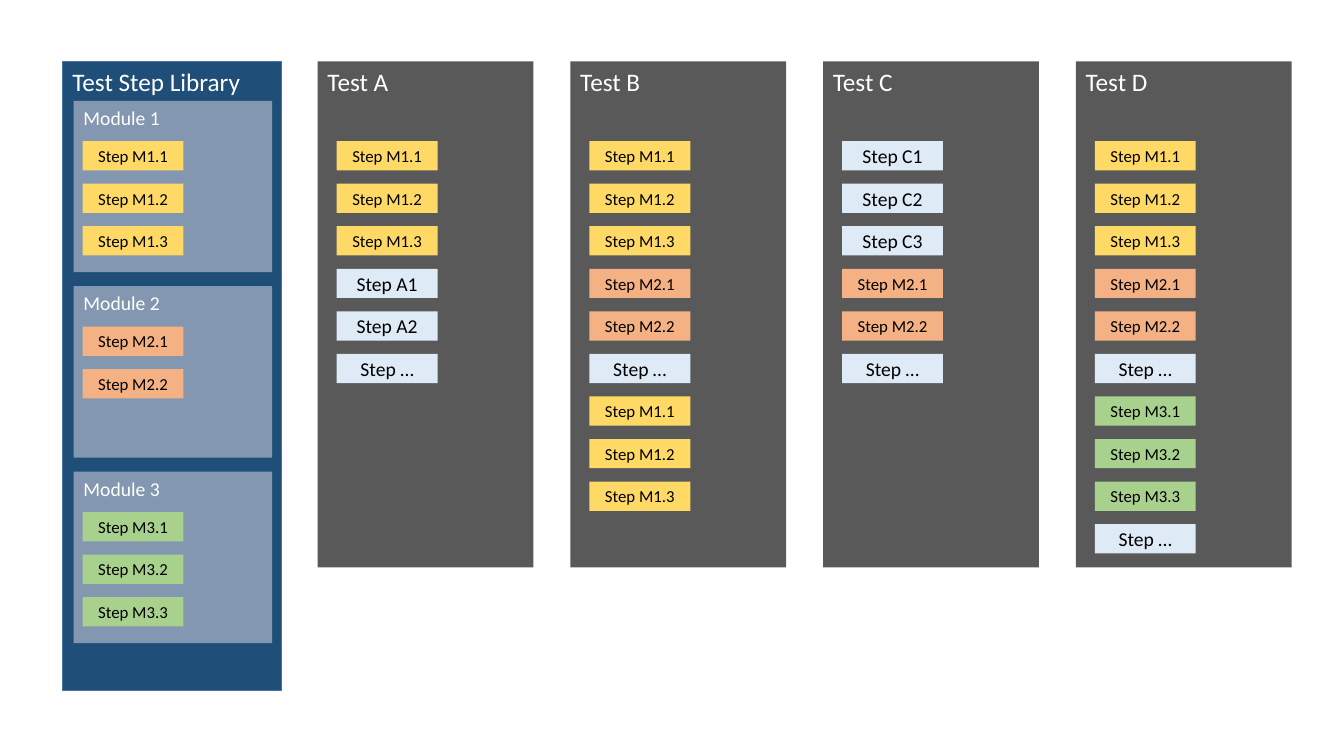
from pptx import Presentation
from pptx.dml.color import RGBColor
from pptx.enum.shapes import MSO_SHAPE
from pptx.enum.text import MSO_ANCHOR, PP_ALIGN
from pptx.util import Inches, Pt

RECTANGLE = MSO_SHAPE.RECTANGLE
TOP, MIDDLE = MSO_ANCHOR.TOP, MSO_ANCHOR.MIDDLE
LEFT, CENTER = PP_ALIGN.LEFT, PP_ALIGN.CENTER

WHITE = RGBColor(0xFF, 0xFF, 0xFF)
BLACK = RGBColor(0x00, 0x00, 0x00)
NAVY = RGBColor(0x1F, 0x4E, 0x79)
NAVY_EDGE = RGBColor(0x43, 0x73, 0x9E)
GRAY = RGBColor(0x59, 0x59, 0x59)
SLATE = RGBColor(0x84, 0x97, 0xB0)
PALE_BLUE = RGBColor(0xDE, 0xEB, 0xF7)
MODULE_COLORS = {
    "M1": RGBColor(0xFF, 0xD9, 0x66),
    "M2": RGBColor(0xF4, 0xB1, 0x83),
    "M3": RGBColor(0xA9, 0xD1, 0x8E),
}

M1 = ["M1.1", "M1.2", "M1.3"]
M2 = ["M2.1", "M2.2"]
M3 = ["M3.1", "M3.2", "M3.3"]
MODULES = [("Module 1", M1), ("Module 2", M2), ("Module 3", M3)]
TESTS = [
    ("Test A", M1 + ["A1", "A2", "…"]),
    ("Test B", M1 + M2 + ["…"] + M1),
    ("Test C", ["C1", "C2", "C3"] + M2 + ["…"]),
    ("Test D", M1 + M2 + ["…"] + M3 + ["…"]),
]

PANEL_TOP = 0.61
MODULE_LEFT, MODULE_TOP, MODULE_PITCH = 0.73, 1.0, 1.84
FIRST_TEST_LEFT, LAST_TEST_LEFT = 3.15, 10.67
TEST_PITCH = (LAST_TEST_LEFT - FIRST_TEST_LEFT) / (len(TESTS) - 1)
FIRST_STEP_TOP, LAST_STEP_TOP = 1.4, 5.2
LONGEST_TEST = max(len(steps) for _, steps in TESTS)
STEP_PITCH = (LAST_STEP_TOP - FIRST_STEP_TOP) / (LONGEST_TEST - 1)


def add_box(slide, text, place, fill, size, color=WHITE, anchor=TOP, align=LEFT):
    box = slide.shapes.add_shape(RECTANGLE, *(Inches(length) for length in place))
    box.shadow.inherit = False
    box.fill.solid()
    box.fill.fore_color.rgb = fill
    box.line.fill.background()
    frame = box.text_frame
    frame.word_wrap = True
    frame.vertical_anchor = anchor
    para = frame.paragraphs[0]
    para.alignment = align
    span = para.add_run()
    span.text = text
    span.font.name = "Calibri"
    span.font.size = Pt(size)
    span.font.color.rgb = color
    return box


def add_steps(slide, steps, left, top):
    """Stack step boxes; steps from a module take its colour and smaller text."""
    for row, step in enumerate(steps):
        module = step.split(".")[0]
        fill = MODULE_COLORS.get(module, PALE_BLUE)
        size = 12 if module in MODULE_COLORS else 14
        place = (left, top + row * STEP_PITCH, 1.0, 0.29)
        add_box(slide, f"Step {step}", place, fill, size, BLACK, MIDDLE, CENTER)


def main():
    deck = Presentation()
    deck.slide_width = Inches(13.33)
    deck.slide_height = Inches(7.5)
    slide = deck.slides.add_slide(deck.slide_layouts[6])

    library = add_box(slide, "Test Step Library", (0.62, PANEL_TOP, 2.17, 6.24), NAVY, 18)
    library.line.color.rgb = NAVY_EDGE
    library.line.width = Pt(1)
    for index, (name, steps) in enumerate(MODULES):
        top = MODULE_TOP + index * MODULE_PITCH
        add_box(slide, name, (MODULE_LEFT, top, 1.97, 1.7), SLATE, 14)
        add_steps(slide, steps, MODULE_LEFT + 0.09, top + 0.4)

    for index, (name, steps) in enumerate(TESTS):
        left = FIRST_TEST_LEFT + index * TEST_PITCH
        add_box(slide, name, (left, PANEL_TOP, 2.14, 5.02), GRAY, 18)
        add_steps(slide, steps, left + 0.19, FIRST_STEP_TOP)

    deck.save("out.pptx")


if __name__ == "__main__":
    main()
